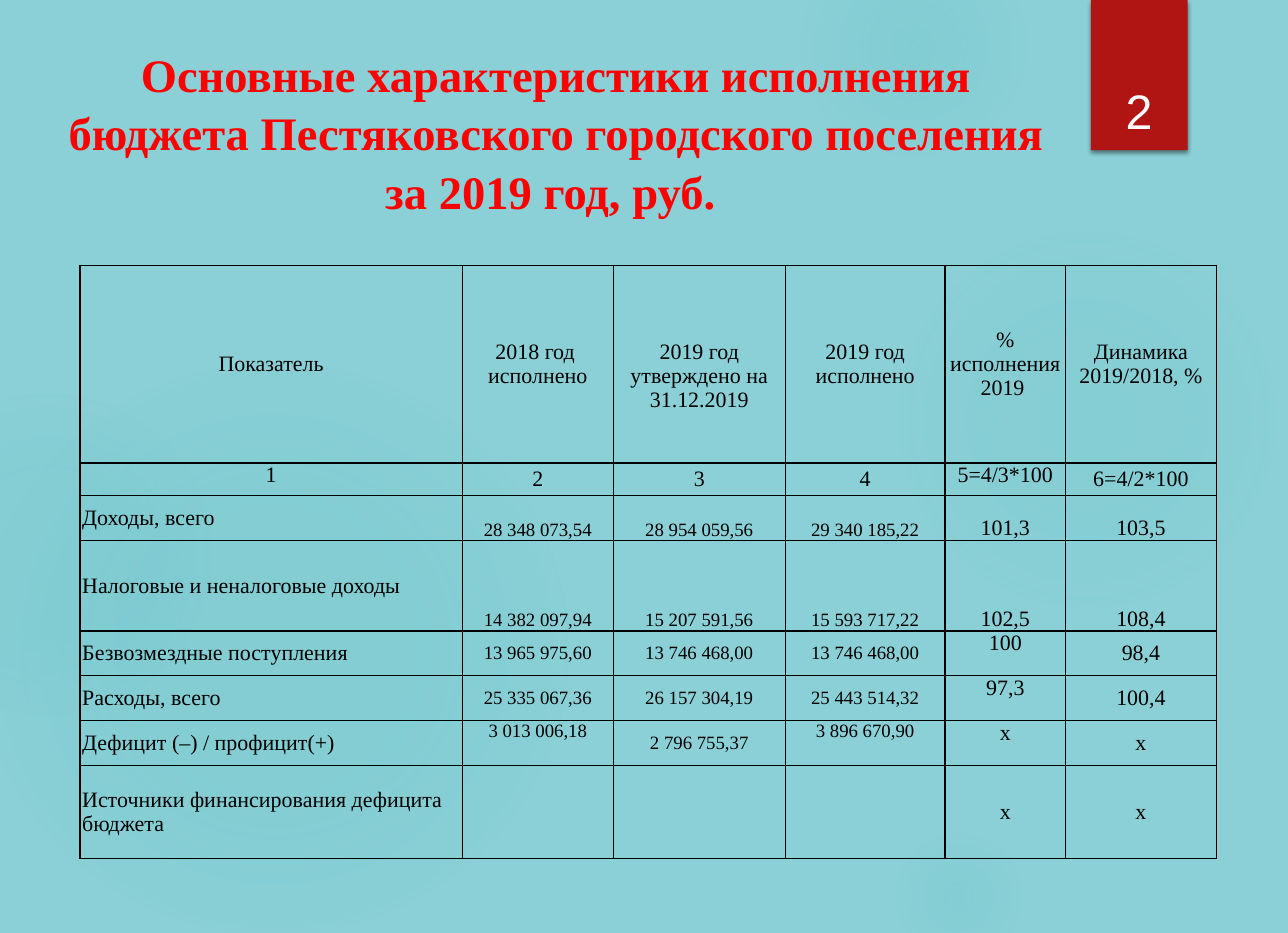
from lxml import etree
from pptx import Presentation
from pptx.dml.color import RGBColor
from pptx.enum.shapes import MSO_SHAPE
from pptx.enum.text import MSO_ANCHOR, MSO_AUTO_SIZE, PP_ALIGN
from pptx.oxml import parse_xml
from pptx.oxml.ns import nsdecls
from pptx.util import Cm, Pt

OVAL, RECT = MSO_SHAPE.OVAL, MSO_SHAPE.RECTANGLE
LEFT, CENTER = PP_ALIGN.LEFT, PP_ALIGN.CENTER
ANCHORS = {"t": MSO_ANCHOR.TOP, "m": MSO_ANCHOR.MIDDLE, "b": MSO_ANCHOR.BOTTOM}
FIXED = MSO_AUTO_SIZE.NONE

COLORS = {"back": "8AD0D6", "glow": "50B9C1", "flag": "B01513",
          "title": "FF0000", "ink": "000000", "page": "FFFFFF"}
SERIF, SANS = "Times New Roman", "Arial"

GLOWS = [
    ((20, 5.13, 8.94, 8.64), (7, 6), 69),
    ((18.03, -1.4, 5.08, 4.9), (14, 7), 73),
    ((20, 18.67, 3.15, 3.02), (9, 5), 66),
    ((-0.48, 8.18, 13.28, 12.83), (11, 10), 75),
    ((-2.67, 8.86, 7.5, 7.24), (8, 8), 72),
]
WIDTHS = [8.61, 3.4, 3.87, 3.6, 2.71, 3.4]
ROWS = [
    (4.45, "mmmmmm", ["Показатель", "2018 год \nисполнено",
                      "2019 год\nутверждено на 31.12.2019", "2019 год\nисполнено",
                      "% исполнения 2019 ", "Динамика 2019/2018, %"]),
    (0.74, "tmmmtm", ["1", "2", "3", "4", "5=4/3*100", "6=4/2*100"]),
    (1.01, "mbbbbb", ["Доходы, всего", "28 348 073,54", "28 954 059,56",
                      "29 340 185,22", "101,3", "103,5"]),
    (2.03, "mbbbbb", ["Налоговые и неналоговые доходы", "14 382 097,94",
                      "15 207 591,56", "15 593 717,22", "102,5", "108,4"]),
    (1.01, "mmmmtm", ["Безвозмездные поступления", "13 965 975,60",
                      "13 746 468,00", "13 746 468,00", "100", "98,4"]),
    (1.01, "mmmmtm", ["Расходы, всего", "25 335 067,36", "26 157 304,19",
                      "25 443 514,32", "97,3", "100,4"]),
    (1.01, "mtmttm", ["Дефицит (–) / профицит(+)", "3 013 006,18",
                      "2 796 755,37", "3 896 670,90", "х", "х"]),
    (2.1, "mmmmmm", ["Источники финансирования дефицита бюджета",
                     "", "", "", "х", "х"]),
]


def color(name):
    return RGBColor.from_string(COLORS[name])


def style(frame, size, ink, font, align, bold=False):
    for para in frame.paragraphs:
        para.alignment = align
        for run in para.runs:
            run.font.size = Pt(size)
            run.font.name = font
            run.font.bold = bold
            run.font.color.rgb = color(ink)


def add_shape(slide, kind, box, fill):
    shape = slide.shapes.add_shape(kind, *map(Cm, box))
    shape.shadow.inherit = False
    shape.line.fill.background()
    shape.fill.solid()
    shape.fill.fore_color.rgb = color(fill)
    return shape


def add_glow(slide, box, alphas, edge):
    shape = add_shape(slide, OVAL, box, "glow")
    stops = "".join(
        f'<a:gs pos="{pos * 1000}"><a:srgbClr val="{COLORS["glow"]}">'
        f'<a:alpha val="{alpha * 1000}"/></a:srgbClr></a:gs>'
        for pos, alpha in zip((0, 36, edge), (*alphas, 0)))
    grad = parse_xml(
        f'<a:gradFill {nsdecls("a")}><a:gsLst>{stops}</a:gsLst><a:path path="circle">'
        '<a:fillToRect l="50000" t="50000" r="50000" b="50000"/></a:path></a:gradFill>')
    props = shape._element.spPr
    props.replace(props.find("{*}solidFill"), grad)


def add_flag(slide, box, page):
    left, top, width, height = box
    flag = add_shape(slide, RECT, box, "flag")
    flag._element.spPr.find("{*}effectLst").append(parse_xml(
        f'<a:outerShdw {nsdecls("a")} blurRad="38100" dist="25400" dir="5400000">'
        f'<a:srgbClr val="{COLORS["ink"]}"><a:alpha val="45000"/></a:srgbClr></a:outerShdw>'))
    label = add_shape(slide, RECT, (left + 0.08, top + 0.91, width - 0.17, 2.36), "flag")
    frame = label.text_frame
    frame.text = page
    frame.vertical_anchor = ANCHORS["b"]
    style(frame, 30.9, "page", SANS, CENTER)


def add_title(slide, box, text):
    title = slide.shapes.title
    title.left, title.top, title.width, title.height = map(Cm, box)
    frame = title.text_frame
    frame.text = text
    frame.word_wrap = True
    frame.auto_size = FIXED
    frame.vertical_anchor = ANCHORS["t"]
    frame.paragraphs[0].line_spacing = 1.05
    style(frame, 29.7, "title", SERIF, CENTER, True)
    slide.shapes._spTree.append(title._element)


def add_edges(cell):
    props = cell._tc.get_or_add_tcPr()
    for spot, side in enumerate("LRTB"):
        line = parse_xml(f'<a:ln{side} {nsdecls("a")} w="12700"/>')
        fill = etree.SubElement(line, line.tag.replace(f"ln{side}", "solidFill"))
        etree.SubElement(fill, fill.tag.replace("solidFill", "srgbClr"), val=COLORS["ink"])
        props.insert(spot, line)


def fill_cell(cell, text, anchor, size, align):
    cell.text_frame.text = text
    cell.vertical_anchor = ANCHORS[anchor]
    cell.margin_left = cell.margin_right = Cm(0.05)
    cell.margin_top = cell.margin_bottom = 0
    cell.fill.background()
    style(cell.text_frame, size, "ink", SERIF, align)
    add_edges(cell)


def add_budget(slide, left, top):
    height = sum(row[0] for row in ROWS)
    box = map(Cm, (left, top, sum(WIDTHS), height))
    table = slide.shapes.add_table(len(ROWS), len(WIDTHS), *box).table
    table.first_row = table.horz_banding = False
    for col, width in zip(table.columns, WIDTHS):
        col.width = Cm(width)
    for r, (tall, anchors, texts) in enumerate(ROWS):
        table.rows[r].height = Cm(tall)
        for c, (anchor, text) in enumerate(zip(anchors, texts)):
            size = 12 if r > 1 and 1 <= c <= 3 else 14
            align = LEFT if r > 1 and c == 0 else CENTER
            fill_cell(table.cell(r, c), text, anchor, size, align)
    table.cell(0, 2).margin_top = Cm(0.55)


def main():
    deck = Presentation()
    deck.slide_width, deck.slide_height = Cm(29), Cm(21)
    slide = deck.slides.add_slide(deck.slide_layouts[5])
    slide.background.fill.solid()
    slide.background.fill.fore_color.rgb = color("back")
    for box, alphas, edge in GLOWS:
        add_glow(slide, box, alphas, edge)
    add_flag(slide, (24.56, 0, 2.18, 3.38), "2")
    add_title(slide, (0.89, 0.84, 23.27, 4.34),
              "Основные характеристики исполнения бюджета Пестяковского "
              "городского поселения за 2019 год, руб. ")
    add_budget(slide, 1.8, 5.97)
    deck.save("out.pptx")


if __name__ == "__main__":
    main()
